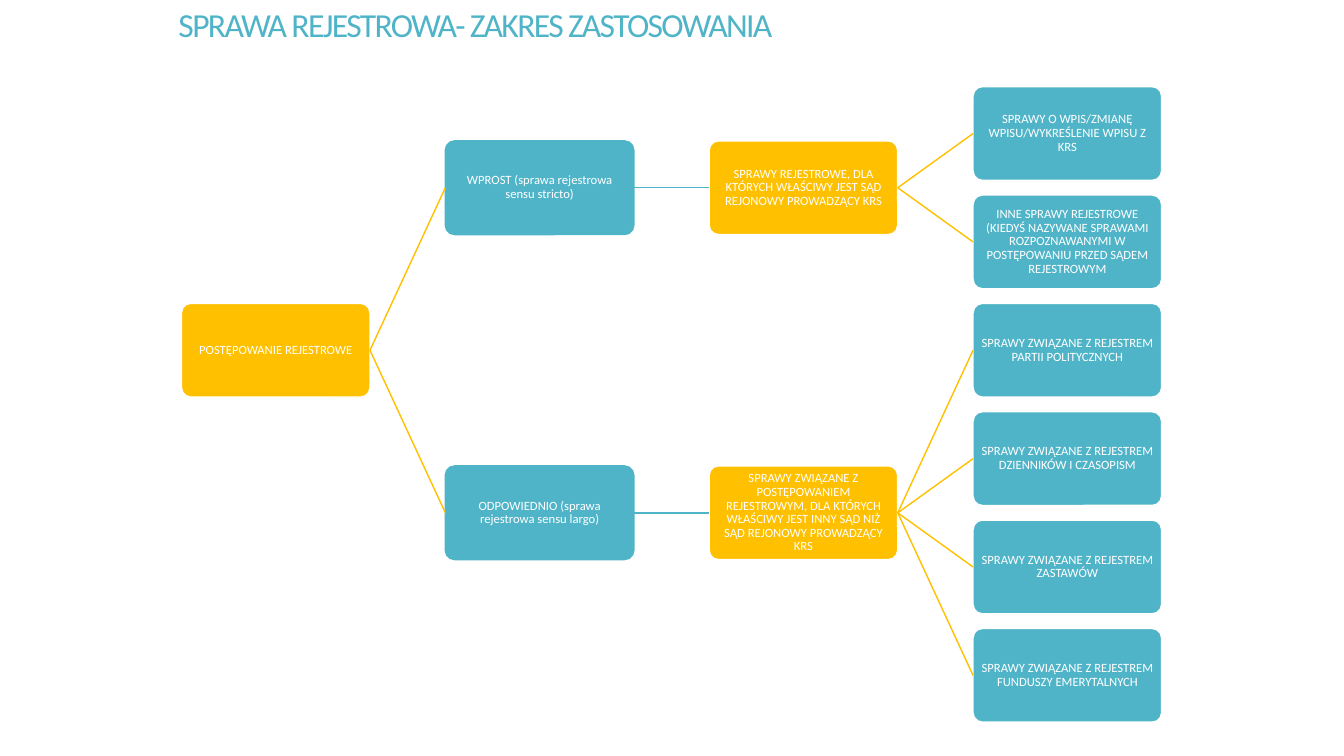
"""Build a slide with a tree of the scope of registry proceedings."""
from dataclasses import dataclass, field

import pptx
import pptx.dml.color
import pptx.enum.shapes
import pptx.enum.text
import pptx.oxml.xmlchemy
import pptx.slide
import pptx.util
from pptx.util import Inches

COLORS = {"teal": "50B4C8", "amber": "FFC000", "white": "FFFFFF"}
FONT = "Calibri"
BOX_WIDTH, BOX_HEIGHT = 1.87, 0.93
FIRST_LEFT, COLUMN_STEP = 1.8, 2.617
FIRST_MIDDLE, ROW_STEP = 1.325, 1.075


@dataclass
class Node:
    text: str
    fill: str = "teal"
    outline: str = "white"
    branch: str = "amber"
    children: list["Node"] = field(default_factory=list)

    def leaves(self) -> int:
        return sum(child.leaves() for child in self.children) or 1


DIRECT = Node(
    "SPRAWY REJESTROWE, DLA KTÓRYCH WŁAŚCIWY JEST SĄD REJONOWY PROWADZĄCY KRS",
    fill="amber",
    children=[
        Node("SPRAWY O WPIS/ZMIANĘ WPISU/WYKREŚLENIE WPISU Z KRS"),
        Node("INNE SPRAWY REJESTROWE (KIEDYŚ NAZYWANE SPRAWAMI ROZPOZNAWANYMI "
             "W POSTĘPOWANIU PRZED SĄDEM REJESTROWYM"),
    ],
)
RELATED = Node(
    "SPRAWY ZWIĄZANE Z POSTĘPOWANIEM REJESTROWYM, DLA KTÓRYCH WŁAŚCIWY JEST "
    "INNY SĄD NIŻ SĄD REJONOWY PROWADZĄCY KRS",
    fill="amber",
    children=[
        Node(f"SPRAWY ZWIĄZANE Z REJESTREM {register}")
        for register in ("PARTII POLITYCZNYCH", "DZIENNIKÓW I CZASOPISM",
                         "ZASTAWÓW", "FUNDUSZY EMERYTALNYCH")
    ],
)
ROOT = Node(
    "POSTĘPOWANIE REJESTROWE",
    fill="amber",
    children=[
        Node("WPROST (sprawa rejestrowa sensu stricto)",
             outline="teal", branch="teal", children=[DIRECT]),
        Node("ODPOWIEDNIO (sprawa rejestrowa sensu largo)",
             outline="teal", branch="teal", children=[RELATED]),
    ],
)


def color(name: str) -> pptx.dml.color.RGBColor:
    return pptx.dml.color.RGBColor.from_string(COLORS[name])


def add_title(slide: pptx.slide.Slide, text: str) -> None:
    title = slide.shapes.title
    title.left, title.top = Inches(1.67), Inches(0)
    title.width, title.height = Inches(10), Inches(0.53)
    frame = title.text_frame
    frame.text = text
    frame.auto_size = pptx.enum.text.MSO_AUTO_SIZE.NONE
    frame.vertical_anchor = pptx.enum.text.MSO_ANCHOR.MIDDLE
    paragraph = frame.paragraphs[0]
    paragraph.alignment = pptx.enum.text.PP_ALIGN.LEFT
    paragraph.line_spacing = 0.9
    paragraph.font.name, paragraph.font.size = FONT, pptx.util.Pt(24)
    paragraph.font.color.rgb = color("teal")
    paragraph.runs[0].font._element.set("spc", "-120")


def add_box(slide: pptx.slide.Slide, node: Node, left: float, middle: float) -> None:
    shape = slide.shapes.add_shape(
        pptx.enum.shapes.MSO_SHAPE.ROUNDED_RECTANGLE,
        Inches(left), Inches(middle - BOX_HEIGHT / 2),
        Inches(BOX_WIDTH), Inches(BOX_HEIGHT))
    shape.adjustments[0] = 0.1
    shape.shadow.inherit = False
    shape.fill.solid()
    shape.fill.fore_color.rgb = color(node.fill)
    shape.line.color.rgb = color(node.outline)
    shape.line.width = pptx.util.Pt(1)
    frame = shape.text_frame
    frame.text = node.text
    frame.word_wrap = True
    frame.vertical_anchor = pptx.enum.text.MSO_ANCHOR.MIDDLE
    frame.margin_left = frame.margin_right = Inches(0.04)
    frame.margin_top = frame.margin_bottom = Inches(0.04)
    paragraph = frame.paragraphs[0]
    paragraph.alignment = pptx.enum.text.PP_ALIGN.CENTER
    paragraph.line_spacing = 0.9
    paragraph.font.name, paragraph.font.size = FONT, pptx.util.Pt(9)
    paragraph.font.color.rgb = color("white")


def add_branch(slide: pptx.slide.Slide, name: str, left: float, start: float,
               right: float, end: float) -> None:
    connector = slide.shapes.add_connector(
        pptx.enum.shapes.MSO_CONNECTOR.STRAIGHT,
        Inches(left), Inches(start), Inches(right), Inches(end))
    connector.line.color.rgb = color(name)
    connector.line.width = pptx.util.Pt(1)
    connector._element.spPr.append(pptx.oxml.xmlchemy.OxmlElement("a:effectLst"))


def draw_tree(slide: pptx.slide.Slide, node: Node, depth: int = 0,
              first_row: int = 0) -> float:
    """Draw a node centred on its leaves and return its vertical middle."""
    left = FIRST_LEFT + depth * COLUMN_STEP
    middle = FIRST_MIDDLE + (first_row + (node.leaves() - 1) / 2) * ROW_STEP
    if node is ROOT:
        middle = FIRST_MIDDLE + 2 * ROW_STEP
    add_box(slide, node, left, middle)
    for child in node.children:
        child_middle = draw_tree(slide, child, depth + 1, first_row)
        add_branch(slide, node.branch, left + BOX_WIDTH, middle,
                   left + COLUMN_STEP, child_middle)
        first_row += child.leaves()
    return middle


def main() -> None:
    presentation = pptx.Presentation()
    presentation.slide_width, presentation.slide_height = Inches(13.33), Inches(7.5)
    slide = presentation.slides.add_slide(presentation.slide_layouts[5])
    add_title(slide, "SPRAWA REJESTROWA- ZAKRES ZASTOSOWANIA")
    draw_tree(slide, ROOT)
    presentation.save("out.pptx")


if __name__ == "__main__":
    main()
